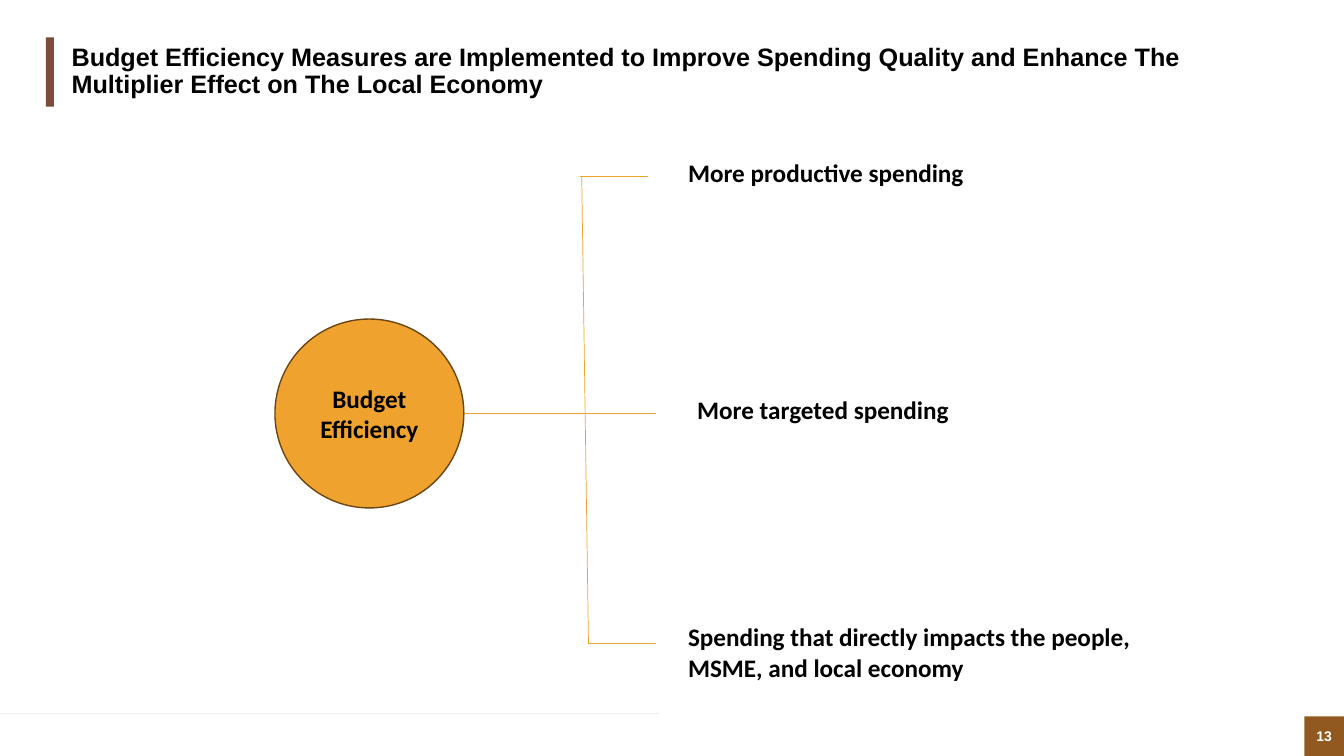
from dataclasses import dataclass

from lxml.etree import SubElement
from pptx import Presentation
from pptx.dml.color import RGBColor
from pptx.enum.shapes import MSO_CONNECTOR, MSO_SHAPE
from pptx.enum.text import MSO_ANCHOR, MSO_AUTO_SIZE, PP_ALIGN
from pptx.oxml.ns import qn
from pptx.util import Cm, Pt


@dataclass(frozen=True)
class Theme:
    ink: str = "000000"
    white: str = "FFFFFF"
    amber: str = "F0A22E"
    amber_edge: str = "694714"
    title_bar: str = "7C4B3B"
    number_fill: str = "91581F"
    footer_rule: str = "EBEBEB"
    heading_font: str = "Arial"
    body_font: str = "Calibri"
    text_size: int = 18
    number_size: int = 10


THEME = Theme()


def write(frame, text, font=THEME.body_font, size=THEME.text_size,
          color=THEME.ink, align=PP_ALIGN.LEFT, anchor=MSO_ANCHOR.TOP,
          line_spacing=None):
    frame.word_wrap = True
    frame.vertical_anchor = anchor
    para = frame.paragraphs[0]
    para.alignment = align
    para.line_spacing = line_spacing
    span = para.add_run()
    span.text = text
    span.font.name = font
    span.font.size = Pt(size)
    span.font.bold = True
    span.font.color.rgb = RGBColor.from_string(color)


def add_title(page, text):
    title = page.shapes.title
    title.left, title.top, title.width, title.height = (
        Cm(1.55), Cm(0.94), Cm(29.49), Cm(1.75))
    title.text_frame.auto_size = MSO_AUTO_SIZE.NONE
    write(title.text_frame, text, font=THEME.heading_font,
          anchor=MSO_ANCHOR.MIDDLE, line_spacing=0.9)


def add_block(page, kind, left, top, width, height, fill, edge=None):
    block = page.shapes.add_shape(kind, Cm(left), Cm(top), Cm(width), Cm(height))
    block.shadow.inherit = False
    block.fill.solid()
    block.fill.fore_color.rgb = RGBColor.from_string(fill)
    if edge:
        block.line.color.rgb = RGBColor.from_string(edge)
        block.line.width = Pt(1)
    else:
        block.line.fill.background()
    return block


def add_line(page, start, end, color=THEME.amber):
    line = page.shapes.add_connector(
        MSO_CONNECTOR.STRAIGHT, *(Cm(value) for value in (*start, *end)))
    line.line.color.rgb = RGBColor.from_string(color)
    line.line.width = Pt(0.5)
    SubElement(line.element.spPr, qn("a:effectLst"))


def add_label(page, text, left, top, width, height):
    box = page.shapes.add_textbox(Cm(left), Cm(top), Cm(width), Cm(height))
    write(box.text_frame, text)
    box.text_frame.auto_size = MSO_AUTO_SIZE.SHAPE_TO_FIT_TEXT


def main():
    deck = Presentation()
    deck.slide_width, deck.slide_height = Cm(33.87), Cm(19.05)
    page = deck.slides.add_slide(deck.slide_layouts[5])

    add_block(page, MSO_SHAPE.RECTANGLE, 1.16, 0.94, 0.2, 1.75, THEME.title_bar)
    add_line(page, (0, 17.98), (16.61, 17.98), THEME.footer_rule)
    number = add_block(page, MSO_SHAPE.RECTANGLE, 32.87, 18.05, 1, 1,
                       THEME.number_fill)
    number.text_frame.margin_left = number.text_frame.margin_right = 0
    write(number.text_frame, "13", font=THEME.heading_font,
          size=THEME.number_size, color=THEME.white,
          align=PP_ALIGN.CENTER, anchor=MSO_ANCHOR.MIDDLE)
    add_title(page, "Budget Efficiency Measures are Implemented to Improve "
                    "Spending Quality and Enhance The Multiplier Effect on "
                    "The Local Economy")

    hub = add_block(page, MSO_SHAPE.OVAL, 6.93, 8.04, 4.76, 4.76,
                    THEME.amber, THEME.amber_edge)
    write(hub.text_frame, "Budget Efficiency", align=PP_ALIGN.CENTER,
          anchor=MSO_ANCHOR.MIDDLE)

    top, middle, bottom = 4.45, 10.42, 16.2
    add_line(page, (14.66, top), (14.83, bottom))
    for start, end, height in ((11.69, 16.54, middle), (14.61, 16.33, top),
                               (14.83, 16.54, bottom)):
        add_line(page, (start, height), (end, height))

    for label in (
        ("More productive spending", 17.09, 3.84, 7.92, 1.02),
        ("More targeted spending", 17.32, 9.8, 7.92, 1.02),
        ("Spending that directly impacts the people, MSME, and local economy",
         17.09, 15.54, 12.29, 1.8),
    ):
        add_label(page, *label)

    deck.save("out.pptx")


if __name__ == "__main__":
    main()
